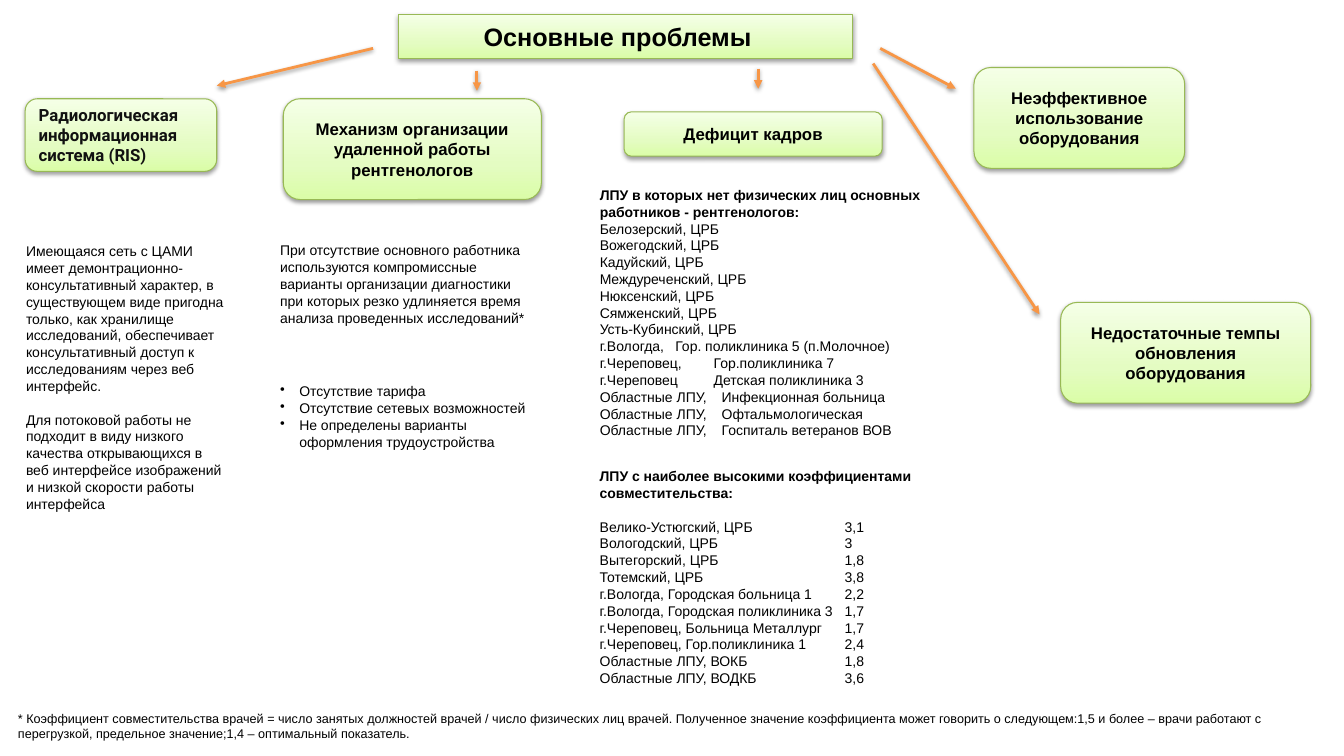
from lxml import etree
from pptx import Presentation
from pptx.dml.color import RGBColor
from pptx.enum.shapes import MSO_CONNECTOR as CONN, MSO_SHAPE as SHAPE
from pptx.enum.text import MSO_ANCHOR as ANCHOR, PP_ALIGN as ALIGN
from pptx.oxml import parse_xml
from pptx.oxml.ns import nsdecls, qn
from pptx.util import Inches, Pt

COLORS = {"text": "000000", "ris": "111111", "edge": "98B955", "arrow": "F79646",
          "low": "DAFDA7", "mid": "E4FCC2", "high": "F5FFE7", "shadow": "000000"}

NETWORK = [
    "Имеющаяся сеть с ЦАМИ имеет демонтрационно-консультативный характер, в существующем "
    "виде пригодна только, как хранилище исследований, обеспечивает консультативный доступ "
    "к исследованиям через веб интерфейс.",
    "Для потоковой работы не подходит в виду низкого качества открывающихся в веб "
    "интерфейсе изображений и низкой скорости работы интерфейса"]
REMOTE = ["При отсутствие основного работника используются компромиссные варианты организации "
          "диагностики при которых резко удлиняется время анализа проведенных исследований*"]
OBSTACLES = ["Отсутствие тарифа", "Отсутствие сетевых возможностей",
             "Не определены варианты оформления трудоустройства"]
NO_STAFF_HEAD = "ЛПУ в которых нет физических лиц основных работников - рентгенологов:"
DISTRICTS = ["Белозерский", "Вожегодский", "Кадуйский", "Междуреченский", "Нюксенский",
             "Сямженский", "Усть-Кубинский"]
CLINICS = [("г.Вологда,", "Гор. поликлиника 5 (п.Молочное)", 0.75),
           ("г.Череповец,", "Гор.поликлиника 7", 1.13),
           ("г.Череповец", "Детская поликлиника 3", 1.13),
           ("Областные ЛПУ,", "Инфекционная больница", 1.21),
           ("Областные ЛПУ,", "Офтальмологическая", 1.21),
           ("Областные ЛПУ,", "Госпиталь ветеранов ВОВ", 1.21)]
RATIO_HEAD = "ЛПУ с наиболее высокими коэффициентами совместительства:"
RATIOS = [("Велико-Устюгский, ЦРБ", "3,1"), ("Вологодский, ЦРБ", "3"),
          ("Вытегорский, ЦРБ", "1,8"), ("Тотемский, ЦРБ", "3,8"),
          ("г.Вологда, Городская больница 1", "2,2"),
          ("г.Вологда, Городская поликлиника 3", "1,7"),
          ("г.Череповец, Больница Металлург", "1,7"),
          ("г.Череповец, Гор.поликлиника 1", "2,4"),
          ("Областные ЛПУ, ВОКБ", "1,8"), ("Областные ЛПУ, ВОДКБ", "3,6")]
FOOTNOTE = ["* Коэффициент совместительства врачей = число занятых должностей врачей / число "
            "физических лиц врачей. Полученное значение коэффициента может говорить о "
            "следующем:1,5 и более – врачи работают с перегрузкой, предельное значение;1,4 – "
            "оптимальный показатель."]
CARDS = [("Радиологическая информационная система (RIS)", (0.25, 0.98, 1.9, 0.72),
          ALIGN.LEFT, "Roboto", "ris"),
         ("Механизм организации удаленной работы рентгенологов", (2.81, 0.98, 2.56, 1),
          ALIGN.CENTER, "Arial", "text"),
         ("Дефицит кадров", (6.19, 1.11, 2.56, 0.44), ALIGN.CENTER, "Arial", "text"),
         ("Неэффективное использование оборудования", (9.66, 0.67, 2.09, 1),
          ALIGN.CENTER, "Arial", "text"),
         ("Недостаточные темпы обновления оборудования", (10.52, 3, 2.48, 1),
          ALIGN.CENTER, "Arial", "text")]
ARROWS = [(3.7, 0.48, 2.15, 0.85), (4.73, 0.7, 4.73, 0.9), (7.52, 0.68, 7.52, 0.88),
          (8.73, 0.48, 9.48, 0.88), (8.66, 0.63, 10.31, 3.12)]


def rgb(name):
    """Return a palette colour."""
    return RGBColor.from_string(COLORS[name])


def set_font(p, size, bold=False, name="Arial", color="text"):
    """Format the runs of a paragraph."""
    for r in p.runs:
        r.font.size, r.font.bold, r.font.name = Pt(size), bold, name
        r.font.color.rgb = rgb(color)


def add_shadow(sp):
    """Give a shape or connector a soft shadow below it."""
    sp._element.spPr.append(parse_xml(
        f'<a:effectLst {nsdecls("a")}><a:outerShdw blurRad="40000" dist="20000" dir="5400000" '
        f'rotWithShape="0"><a:srgbClr val="{COLORS["shadow"]}"><a:alpha val="38000"/>'
        '</a:srgbClr></a:outerShdw></a:effectLst>'))


def style_card(sp, text, size, align=ALIGN.CENTER, font="Arial", color="text"):
    """Apply the green gradient, edge, shadow and bold caption."""
    stops = "".join(f'<a:gs pos="{pos}"><a:srgbClr val="{COLORS[c]}"/></a:gs>'
                    for pos, c in ((0, "low"), (35000, "mid"), (100000, "high")))
    sp._element.spPr.append(parse_xml(
        f'<a:gradFill {nsdecls("a")} rotWithShape="1"><a:gsLst>{stops}</a:gsLst>'
        '<a:lin ang="16200000" scaled="0"/></a:gradFill>'))
    sp.line.color.rgb, sp.line.width = rgb("edge"), Pt(0.75)
    add_shadow(sp)
    tf = sp.text_frame
    tf.text, tf.word_wrap, tf.vertical_anchor = text, True, ANCHOR.MIDDLE
    p = tf.paragraphs[0]
    p.alignment = align
    set_font(p, size, True, font, color)


def add_title(s, box):
    """Turn the title placeholder into the heading card."""
    sp = s.shapes.title
    sp.left, sp.top, sp.width, sp.height = map(Inches, box)
    sp._element.spPr.append(parse_xml(
        f'<a:prstGeom {nsdecls("a")} prst="roundRect"><a:avLst/></a:prstGeom>'))
    style_card(sp, "Основные проблемы", 18)
    sp.text_frame.margin_right = Inches(0.26)


def add_card(s, text, box, align, font, color):
    """Add one problem card."""
    sp = s.shapes.add_shape(SHAPE.ROUNDED_RECTANGLE, *map(Inches, box))
    style_card(sp, text, 12, align, font, color)


def add_arrow(s, ends):
    """Add an arrow from the heading towards a card."""
    c = s.shapes.add_connector(CONN.STRAIGHT, *map(Inches, ends))
    c.line.color.rgb, c.line.width = rgb("arrow"), Pt(2)
    etree.SubElement(c.line._get_or_add_ln(), qn("a:tailEnd"), type="triangle")
    add_shadow(c)


def add_text(s, box, lines, size=10, gap=0):
    """Add a text box with one paragraph per line and return its paragraphs."""
    tf = s.shapes.add_textbox(*map(Inches, box)).text_frame
    tf.word_wrap = True
    tf.text = "\n".join(lines)
    for i, p in enumerate(tf.paragraphs):
        if i and gap:
            p.space_before = Pt(gap)
        set_font(p, size)
    return tf.paragraphs


def add_tab(p, pos):
    """Set one left tab stop on a paragraph."""
    tabs = etree.SubElement(p._p.get_or_add_pPr(), qn("a:tabLst"))
    etree.SubElement(tabs, qn("a:tab"), pos=str(Inches(pos)), algn="l")


def add_bullets(s, box, lines):
    """Add a bulleted list."""
    for p in add_text(s, box, lines):
        pPr = p._p.get_or_add_pPr()
        pPr.set("marL", str(Inches(0.19)))
        pPr.set("indent", str(Inches(-0.19)))
        etree.SubElement(pPr, qn("a:buChar"), char="•")


def add_no_staff(s, box):
    """List the institutions without radiologists."""
    lines = [f"{d}, ЦРБ" for d in DISTRICTS] + [f"{a}\t{b}" for a, b, _ in CLINICS]
    ps = add_text(s, box, [NO_STAFF_HEAD] + lines)
    set_font(ps[0], 10, True)
    for p, (_, _, pos) in zip(ps[-len(CLINICS):], CLINICS):
        add_tab(p, pos)


def add_ratios(s, box):
    """List the institutions with the highest ratios."""
    ps = add_text(s, box, [RATIO_HEAD] + [f"{a}\t{b}" for a, b in RATIOS])
    set_font(ps[0], 10, True)
    ps[1].space_before = Pt(12)
    for p in ps[1:]:
        add_tab(p, 2.43)


def main():
    """Build the slide and save it."""
    prs = Presentation()
    prs.slide_width, prs.slide_height = Inches(13.33), Inches(7.5)
    s = prs.slides.add_slide(prs.slide_layouts[5])
    add_title(s, (3.95, 0.14, 4.51, 0.44))
    for card in CARDS:
        add_card(s, *card)
    add_text(s, (0.16, 2.36, 2.17, 2.96), NETWORK, gap=12)
    add_text(s, (2.68, 2.35, 2.63, 1.11), REMOTE)
    add_bullets(s, (2.68, 3.75, 2.78, 0.94), OBSTACLES)
    add_no_staff(s, (5.85, 1.8, 3.51, 2.66))
    add_ratios(s, (5.85, 4.59, 3.6, 2.29))
    add_text(s, (0.08, 7, 13.05, 0.4), FOOTNOTE, size=9)
    for ends in ARROWS:
        add_arrow(s, ends)
    prs.save("out.pptx")


if __name__ == "__main__":
    main()
